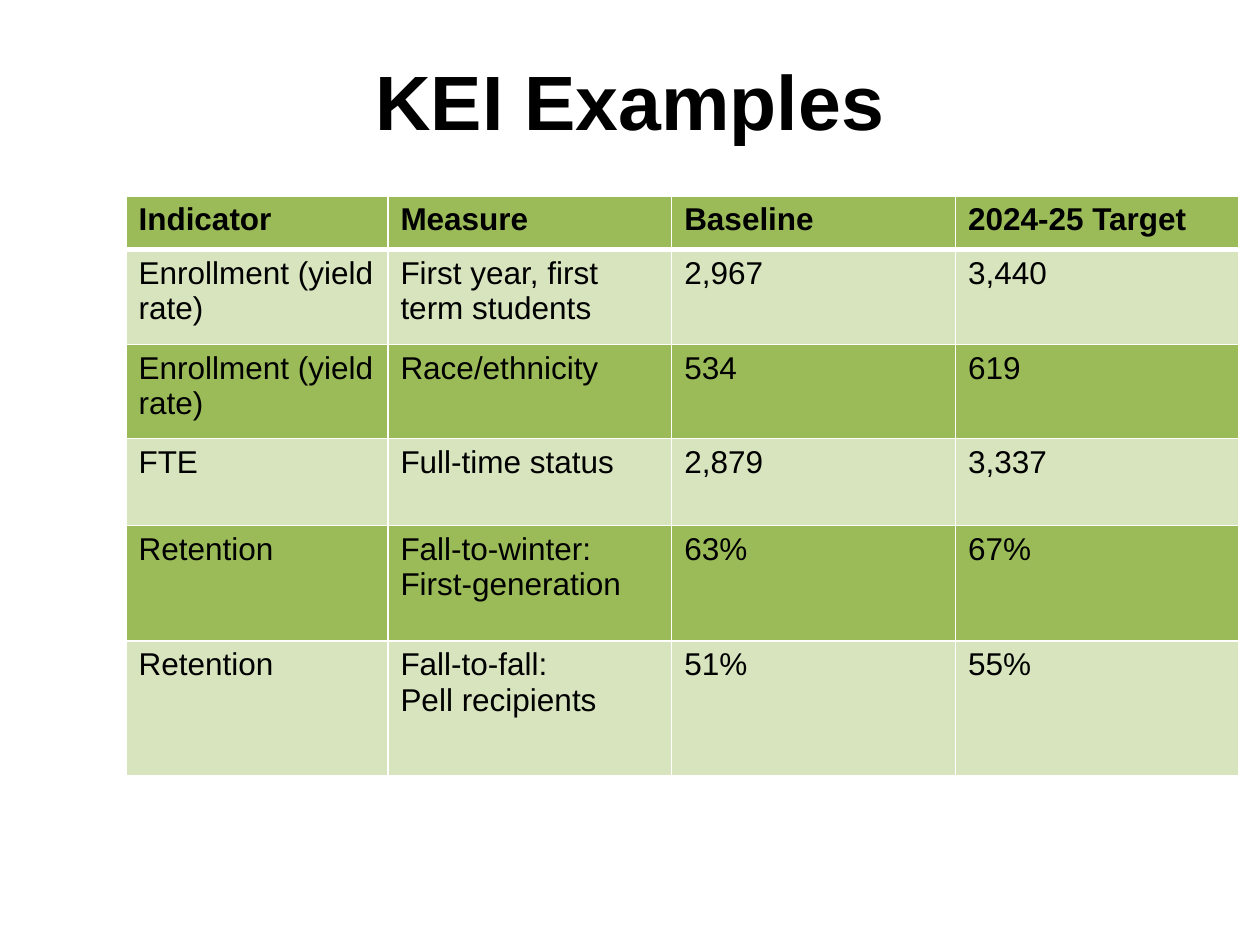
from dataclasses import dataclass

from lxml.etree import SubElement as Sub
from pptx import Presentation
from pptx.dml.color import RGBColor as RGB
from pptx.enum.text import MSO_ANCHOR as Anchor, PP_ALIGN as Align
from pptx.oxml.ns import qn
from pptx.util import Cm, Pt


@dataclass(frozen=True)
class Theme:
    font: str = "Arial"
    ink: str = "000000"
    green: str = "9BBB59"
    pale: str = "D7E4BD"
    rule: str = "FFFFFF"
    title: int = 44
    body: int = 18


theme = Theme()


def write(par, text, size, bold):
    run = par.add_run()
    run.text = text
    run.font.name = theme.font
    run.font.size = Pt(size)
    run.font.bold = bold
    run.font.color.rgb = RGB.from_string(theme.ink)


def edge(cell, side, width):
    """Draw one border; call before the cell gets its fill."""
    line = Sub(cell._tc.get_or_add_tcPr(), qn("a:ln" + side), w=str(Pt(width)))
    fill = Sub(line, qn("a:solidFill"))
    Sub(fill, qn("a:srgbClr"), val=theme.rule)


deck = Presentation()
deck.slide_width, deck.slide_height = Cm(25.4), Cm(19.05)
slide = deck.slides.add_slide(deck.slide_layouts[6])

# Title
frame = slide.shapes.add_textbox(Cm(1.27), Cm(0.76), Cm(22.86), Cm(3.18)).text_frame
frame.word_wrap = True
frame.vertical_anchor = Anchor.TOP
frame.margin_top = Cm(0.31)
head = frame.paragraphs[0]
head.alignment = Align.CENTER
write(head, "KEI Examples", theme.title, True)

# Indicator table: a line break in a cell starts a new paragraph
rows = [
    ("Indicator", "Measure", "Baseline", "2024-25 Target"),
    ("Enrollment (yield rate)", "First year, first term students", "2,967", "3,440"),
    ("Enrollment (yield rate)", "Race/ethnicity", "534", "619"),
    ("FTE", "Full-time status", "2,879", "3,337"),
    ("Retention", "Fall-to-winter: First-generation", "63%", "67%"),
    ("Retention", "Fall-to-fall:\nPell recipients", "51%", "55%"),
]
widths = [5.28, 5.72, 5.72, 5.72]
heights = [1.08, 1.91, 1.9, 1.75, 2.33, 2.71]

table = slide.shapes.add_table(
    len(rows), len(widths), Cm(2.54), Cm(3.95), Cm(sum(widths)), Cm(sum(heights))
).table
for col, width in zip(table.columns, widths):
    col.width = Cm(width)
for row, height in zip(table.rows, heights):
    row.height = Cm(height)

for r, row in enumerate(rows):
    for c, text in enumerate(row):
        cell = table.cell(r, c)
        top = 3 if r == 1 else 1
        base = 3 if r == 0 else 1
        for side, width in zip("LRTB", (1, 1, top, base)):
            edge(cell, side, width)
        cell.fill.solid()
        cell.fill.fore_color.rgb = RGB.from_string(theme.pale if r % 2 else theme.green)
        body = cell.text_frame
        for i, line in enumerate(text.split("\n")):
            par = body.add_paragraph() if i else body.paragraphs[0]
            write(par, line, theme.body, r == 0)

deck.save("out.pptx")
